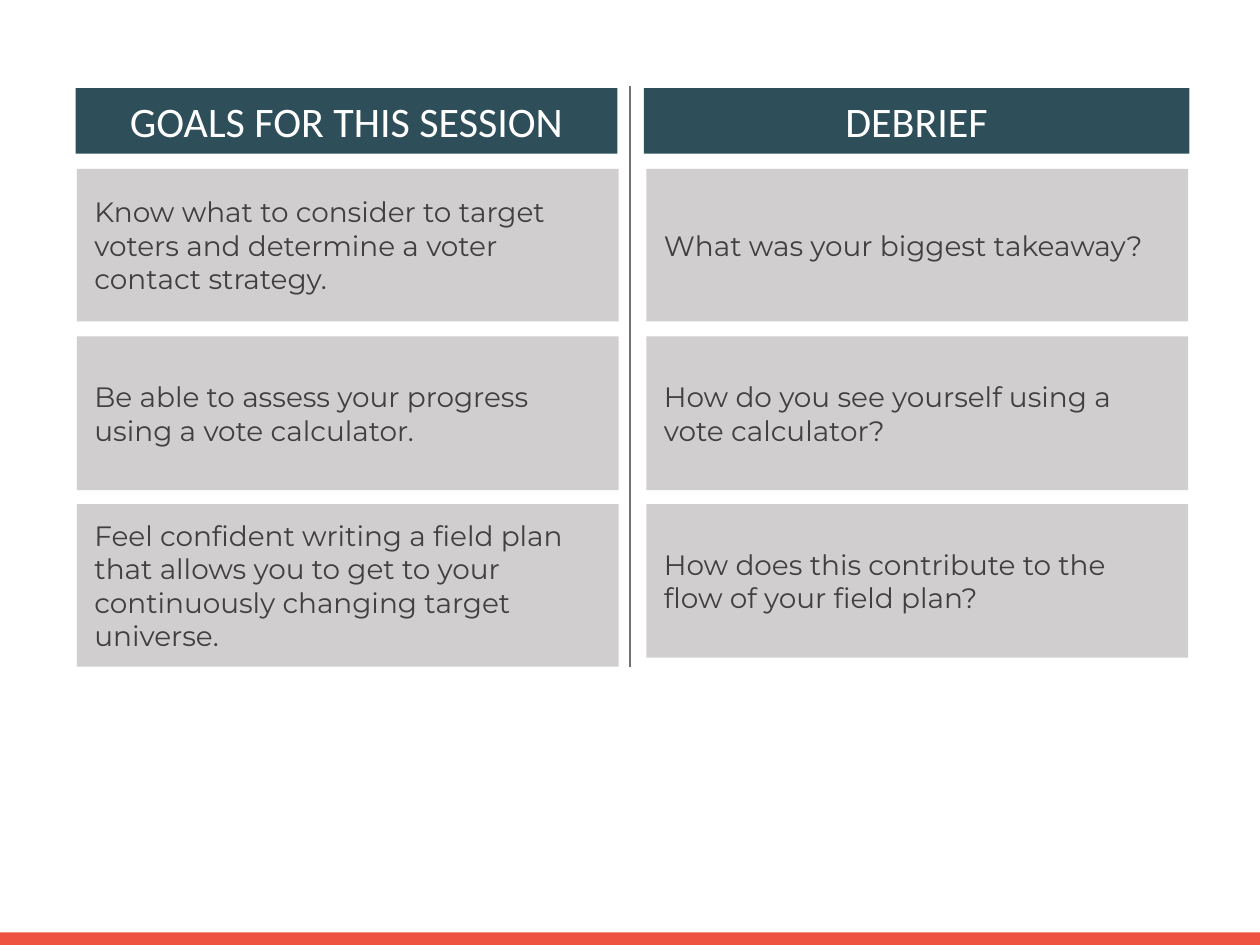
from lxml.etree import SubElement
from pptx import Presentation
from pptx.dml.color import RGBColor as RGB
from pptx.enum.shapes import MSO_CONNECTOR as LINE, MSO_SHAPE as SHAPE
from pptx.enum.text import MSO_ANCHOR as ANCHOR, PP_ALIGN as ALIGN
from pptx.oxml.ns import qn
from pptx.util import Inches, Pt

HUES = {"bar": "ED5340", "head": "2E4F5A", "card": "D0CECE",
        "rule": "767171", "white": "FFFFFF", "ink": "404040"}

HEAD = {"fill": "head", "hue": "white", "align": ALIGN.CENTER, "pad": (0.07, 0.04),
        "font": {"name": "Calibri", "size": Pt(24)}}
CARD = {"fill": "card", "hue": "ink", "align": ALIGN.LEFT, "pad": (0.14, 0.07),
        "font": {"name": "Montserrat", "size": Pt(16)}}

# Header left and width, card left, header text, cards as (text, height)
COLS = [
    (0.6, 4.3, 0.61, "GOALS FOR THIS SESSION", [
        ("Know what to consider to target voters and determine a voter "
         "contact strategy.", 1.21),
        ("Be able to assess your progress using a vote calculator.", 1.22),
        ("Feel confident writing a field plan that allows you to get to your "
         "continuously changing target universe.", 1.29)]),
    (5.11, 4.33, 5.13, "DEBRIEF", [
        ("What was your biggest takeaway?", 1.21),
        ("How do you see yourself using a vote calculator?", 1.22),
        ("How does this contribute to the flow of your field plan?", 1.22)]),
]
TOP, STEP, WIDTH = 1.34, 1.33, 4.3


class Board:
    """Holds the colours and the current slide."""

    def __init__(self, slide, hues):
        self.slide, self.hues = slide, hues

    def tint(self, name):
        return RGB.from_string(self.hues[name])

    def rect(self, x, y, w, h, fill):
        box = self.slide.shapes.add_shape(
            SHAPE.RECTANGLE, Inches(x), Inches(y), Inches(w), Inches(h))
        box.shadow.inherit = False
        box.fill.solid()
        box.fill.fore_color.rgb = self.tint(fill)
        box.line.fill.background()
        return box

    def label(self, x, y, w, h, text, style):
        """Draw a filled rectangle with text in the given style."""
        frame = self.rect(x, y, w, h, style["fill"]).text_frame
        side, edge = map(Inches, style["pad"])
        form = {"word_wrap": True, "vertical_anchor": ANCHOR.MIDDLE,
                "margin_left": side, "margin_right": side,
                "margin_top": edge, "margin_bottom": edge}
        for key, value in form.items():
            setattr(frame, key, value)
        para = frame.paragraphs[0]
        para.alignment = style["align"]
        run = para.add_run()
        run.text = text
        for key, value in style["font"].items():
            setattr(run.font, key, value)
        run.font.color.rgb = self.tint(style["hue"])

    def rule(self, x, start, end, hue):
        """Draw a thin upright line."""
        line = self.slide.shapes.add_connector(
            LINE.STRAIGHT, Inches(x), Inches(start), Inches(x), Inches(end))
        line.line.color.rgb = self.tint(hue)
        line.line.width = Pt(1)
        SubElement(line._element.spPr, qn("a:effectLst"))


def main():
    deck = Presentation()
    deck.slide_width, deck.slide_height = Inches(10), Inches(7.5)
    board = Board(deck.slides.add_slide(deck.slide_layouts[6]), HUES)
    board.rect(0, 7.4, 10, 0.1, "bar")
    for left, width, inset, head, cards in COLS:
        board.label(left, 0.7, width, 0.52, head, HEAD)
        for row, (text, high) in enumerate(cards):
            board.label(inset, TOP + row * STEP, WIDTH, high, text, CARD)
    board.rule(5, 5.29, 0.68, "rule")
    deck.save("out.pptx")


if __name__ == "__main__":
    main()
